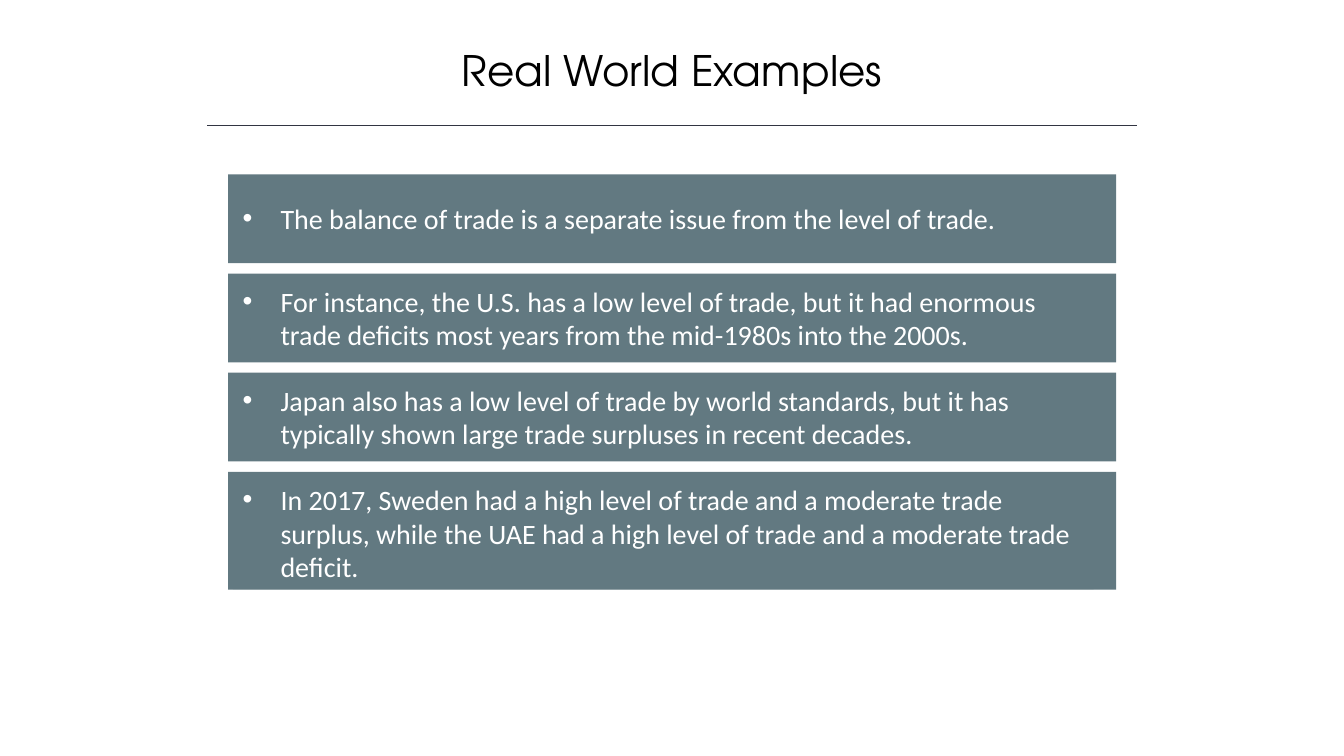
import pptx
import pptx.util
import pptx.dml.color
import pptx.enum.shapes
import pptx.enum.text
import pptx.oxml.xmlchemy

SLATE = "627981"


def color(value):
    return pptx.dml.color.RGBColor.from_string(value)


def add_text(shapes, text, place, *, font, size, ink,
             align=None, fill=None, bullet=None, indent=27):
    box = shapes.add_textbox(*map(pptx.util.Pt, place))
    frame = box.text_frame
    frame.word_wrap = True
    para = frame.paragraphs[0]
    para.alignment = align
    span = para.add_run()
    span.text = text
    span.font.name = font
    span.font.size = pptx.util.Pt(size)
    span.font.color.rgb = color(ink)
    if fill:
        box.fill.solid()
        box.fill.fore_color.rgb = color(fill)
    if bullet:
        frame.auto_size = pptx.enum.text.MSO_AUTO_SIZE.SHAPE_TO_FIT_TEXT
        properties = para._p.get_or_add_pPr()
        properties.set("marL", str(int(pptx.util.Pt(indent))))
        properties.set("indent", str(int(pptx.util.Pt(-indent))))
        for tag, name, value in (("a:buFont", "typeface", "Arial"), ("a:buChar", "char", bullet)):
            mark = pptx.oxml.xmlchemy.OxmlElement(tag)
            mark.set(name, value)
            properties.append(mark)


deck = pptx.Presentation()
deck.slide_width, deck.slide_height = pptx.util.Pt(960), pptx.util.Pt(540)
page = deck.slides.add_slide(deck.slide_layouts[6])

# Title and rule
add_text(page.shapes, "Real World Examples", (110, 28, 740, 44),
         font="TeX Gyre Adventor", size=30, ink="000000",
         align=pptx.enum.text.PP_ALIGN.CENTER)
rule = page.shapes.add_connector(pptx.enum.shapes.MSO_CONNECTOR.STRAIGHT,
                                 *map(pptx.util.Pt, (148, 89.5, 812, 89.5)))
rule.line.color.rgb = color("323542")
rule.line.width = pptx.util.Pt(1)
rule._element.spPr.append(pptx.oxml.xmlchemy.OxmlElement("a:effectLst"))

# Cards: text, panel height, text offset, text height
cards = [
    ("The balance of trade is a separate issue from the level of trade.", 63.4, 15.8, 31.7),
    ("For instance, the U.S. has a low level of trade, but it had enormous trade "
     "deficits most years from the mid-1980s into the 2000s.", 63.4, 4, 55.4),
    ("Japan also has a low level of trade by world standards, but it has typically "
     "shown large trade surpluses in recent decades.", 63.4, 4, 55.4),
    ("In 2017, Sweden had a high level of trade and a moderate trade surplus, while "
     "the UAE had a high level of trade and a moderate trade deficit.", 84.2, 4, 79.9),
]
gap = 7.4
top = 124.6
for text, height, offset, text_height in cards:
    card = page.shapes.add_group_shape()
    panel = card.shapes.add_shape(pptx.enum.shapes.MSO_SHAPE.RECTANGLE,
                                  *map(pptx.util.Pt, (162.9, top, 634.3, height)))
    panel.shadow.inherit = False
    panel.fill.solid()
    panel.fill.fore_color.rgb = color(SLATE)
    panel.line.fill.background()
    add_text(card.shapes, text, (166.3, top + offset, 614.9, text_height),
             font="Calibri", size=20, ink="FFFFFF", fill=SLATE, bullet="•")
    top += height + gap

deck.save("out.pptx")
